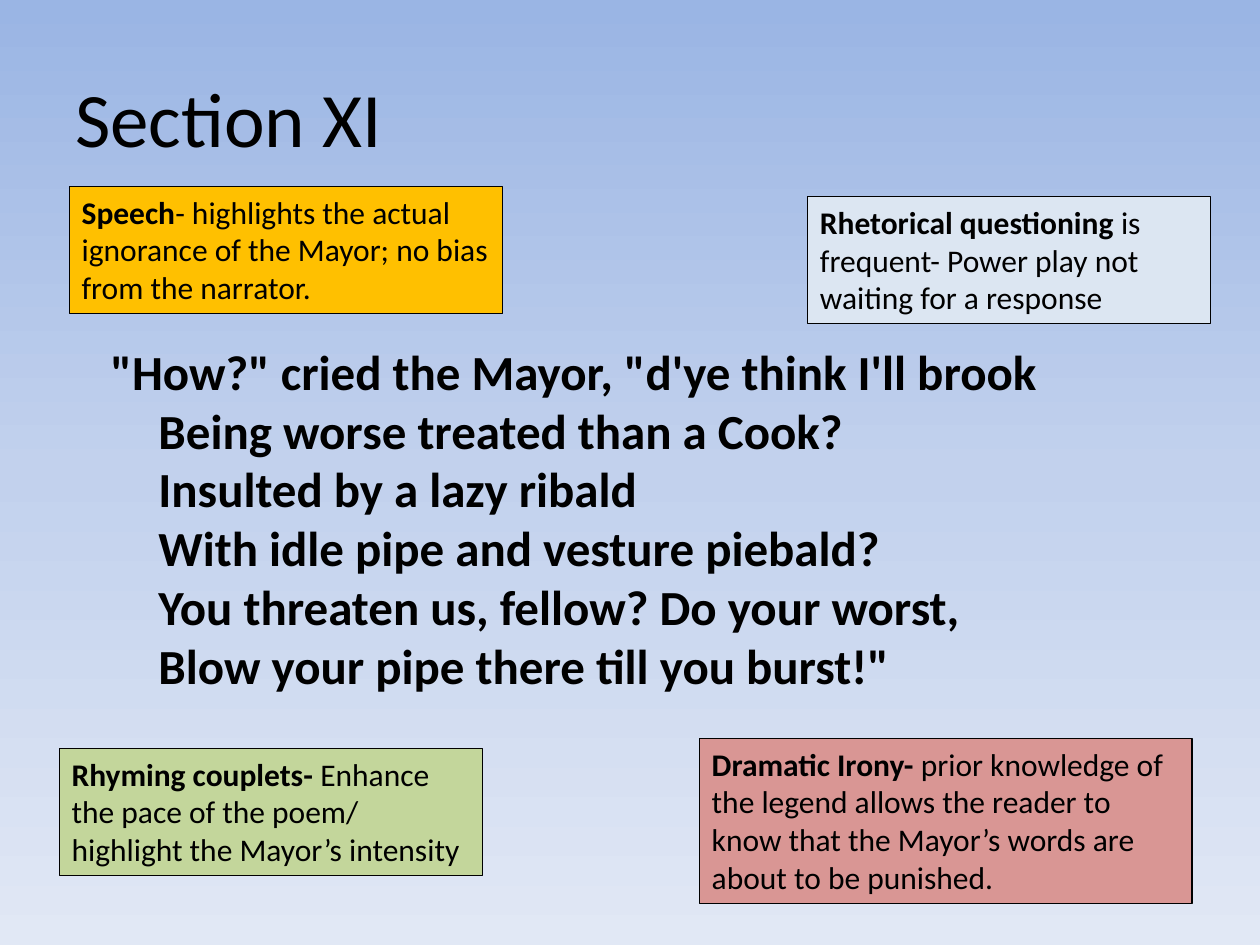
from lxml import etree
from pptx import Presentation, util as u
from pptx.dml.color import RGBColor
from pptx.enum import shapes, text
from pptx.oxml.ns import qn

FONT = "Calibri"
COLOURS = {
    "ink": "000000",
    "sky_top": "9AB5E4",
    "sky_middle": "C2D1ED",
    "sky_bottom": "E1E8F5",
    "speech": "FFC000",
    "questioning": "DCE6F2",
    "couplets": "C3D69B",
    "irony": "D99694",
}
VERSE = [
    "\"How?\" cried the Mayor, \"d'ye think I'll brook",
    "Being worse treated than a Cook?",
    "Insulted by a lazy ribald",
    "With idle pipe and vesture piebald?",
    "You threaten us, fellow? Do your worst,",
    "Blow your pipe there till you burst!\"",
]
# colour, box (left, top, width, height), bold term, explanation
NOTES = [
    ("speech", (0.55, 1.48, 3.44, 1.01), "Speech",
     "- highlights the actual ignorance of the Mayor; no bias from the narrator."),
    ("questioning", (6.41, 1.56, 3.2, 1.01), "Rhetorical questioning ",
     "is frequent- Power play not waiting for a response"),
    ("couplets", (0.47, 5.94, 3.36, 1.01), "Rhyming couplets- ",
     "Enhance the pace of the poem/ highlight the Mayor’s intensity"),
    ("irony", (5.55, 5.86, 3.91, 1.31), "Dramatic Irony- ",
     "prior knowledge of the legend allows the reader to know that "
     "the Mayor’s words are about to be punished."),
]


def colour(name):
    return RGBColor.from_string(COLOURS[name])


def inches(box):
    return [u.Inches(length) for length in box]


def add_run(paragraph, words, size, bold=False):
    run = paragraph.add_run()
    run.text = words
    run.font.name = FONT
    run.font.size = u.Pt(size)
    run.font.bold = bold
    run.font.color.rgb = colour("ink")


def paint_background(slide):
    """Fill the slide with a three-stop gradient from top to bottom."""
    fill = slide.background.fill
    fill.gradient()
    gradient = slide.element.find(".//" + qn("a:gradFill"))
    stops = gradient.find(qn("a:gsLst"))
    for stop in list(stops):
        stops.remove(stop)
    for position, name in enumerate(("sky_top", "sky_middle", "sky_bottom")):
        stop = etree.SubElement(stops, qn("a:gs"), pos=str(position * 50000))
        etree.SubElement(stop, qn("a:srgbClr"), val=COLOURS[name])
    gradient.find(qn("a:lin")).set("ang", str(90 * 60000))


def add_text_box(slide, box):
    frame = slide.shapes.add_textbox(*inches(box)).text_frame
    frame.word_wrap = True
    return frame


def add_title(slide, box, words):
    frame = add_text_box(slide, box)
    frame.vertical_anchor = text.MSO_ANCHOR.MIDDLE
    add_run(frame.paragraphs[0], words, 44)


def add_verse(slide, box, lines):
    """Set the lines as one paragraph with a hanging indent."""
    paragraph = add_text_box(slide, box).paragraphs[0]
    indent = u.Inches(0.38)
    properties = paragraph._p.get_or_add_pPr()
    properties.set("marL", str(indent))
    properties.set("indent", str(-indent))
    for number, line in enumerate(lines):
        if number:
            paragraph.add_line_break()
        add_run(paragraph, line, 28, bold=True)


def add_note(slide, box, fill_name, term, explanation):
    shape = slide.shapes.add_shape(shapes.MSO_SHAPE.RECTANGLE, *inches(box))
    shape.shadow.inherit = False
    shape.fill.solid()
    shape.fill.fore_color.rgb = colour(fill_name)
    shape.line.color.rgb = colour("ink")
    shape.line.width = u.Pt(0.75)
    frame = shape.text_frame
    frame.word_wrap = True
    frame.auto_size = text.MSO_AUTO_SIZE.SHAPE_TO_FIT_TEXT
    frame.vertical_anchor = text.MSO_ANCHOR.TOP
    paragraph = frame.paragraphs[0]
    paragraph.alignment = text.PP_ALIGN.LEFT
    add_run(paragraph, term, 18, bold=True)
    add_run(paragraph, explanation, 18)


def main():
    presentation = Presentation()
    presentation.slide_width = u.Inches(10)
    presentation.slide_height = u.Inches(7.5)
    slide = presentation.slides.add_slide(presentation.slide_layouts[6])
    paint_background(slide)
    add_title(slide, (0.5, 0.3, 9, 1.25), "Section XI")
    add_verse(slide, (0.78, 2.66, 8.64, 2.97), VERSE)
    for fill_name, box, term, explanation in NOTES:
        add_note(slide, box, fill_name, term, explanation)
    presentation.save("out.pptx")


if __name__ == "__main__":
    main()
